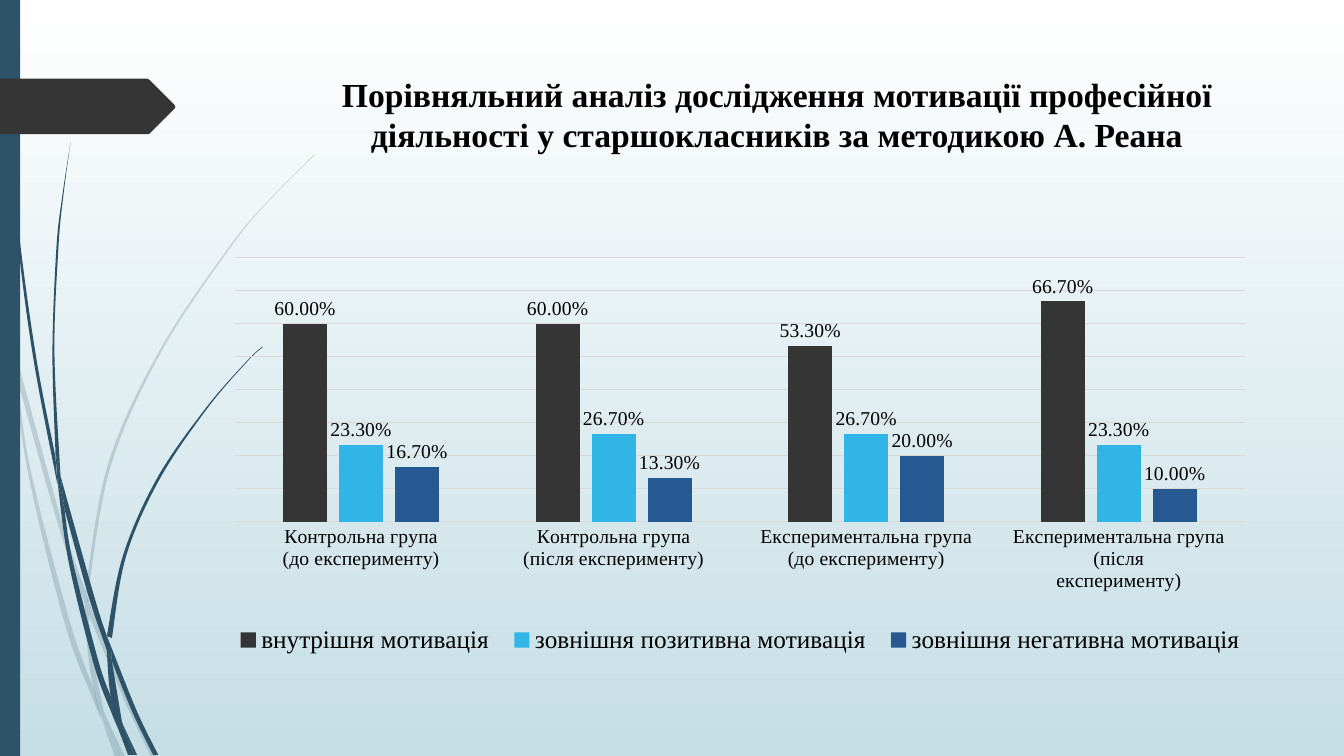
from lxml.etree import SubElement
from pptx import Presentation
from pptx.chart.data import CategoryChartData as ChartData
from pptx.dml.color import RGBColor as RGB
from pptx.enum.chart import XL_CHART_TYPE as CT, XL_LABEL_POSITION as LP
from pptx.enum.chart import XL_LEGEND_POSITION as LegPos, XL_TICK_MARK as Tick
from pptx.enum.shapes import MSO_SHAPE as Shape
from pptx.enum.text import MSO_ANCHOR as Anchor, PP_ALIGN as Align
from pptx.oxml import parse_xml
from pptx.oxml.ns import nsdecls, qn
from pptx.util import Inches, Pt

COLORS = {
    "sky": "FFFFFF", "mist": "C5DEE5", "teal": "2E5369", "dark": "353535",
    "text": "000000", "grid": "D9D9D9", "blue": "31B4E6", "navy": "265991",
}
COLS, ROWS, CELL = 1333, 750, Inches(0.01)

PALE_BLADES = [
    ([(11, 350), (9, 322), (0, 282)], [(0, 299), (10, 344)]),
    ([(17, 376), (58, 522), (84, 599)], [(85, 586), (62, 520), (14, 345)]),
    ([(88, 610), (123, 694), (150, 751)], [(155, 751), (127, 692), (92, 607), (88, 596)]),
    ([(119, 751), (124, 751)], [(105, 711)]),
    ([(11, 350), (28, 470), (65, 621), (92, 693), (101, 714)],
     [(93, 683), (70, 619), (31, 469), (17, 376)]),
    ([(84, 599), (87, 646), (93, 683), (105, 711)], [(103, 706), (91, 646), (88, 608)]),
    ([(88, 596), (88, 584), (110, 462), (160, 349), (229, 245), (268, 198), (312, 154)],
     [(312, 153), (268, 197), (228, 244), (158, 348), (107, 461), (85, 584)]),
    ([(101, 714), (114, 751)], [(119, 751)]),
    ([(88, 608), (88, 596)], [(85, 586), (84, 599)]),
    ([(93, 683), (99, 707), (119, 751)], [(105, 711), (96, 692)]),
]
DARK_BLADES = [
    ([(3, 0), (7, 110), (17, 233), (33, 355), (57, 481)],
     [(55, 453), (36, 355), (19, 232), (8, 109), (4, 0)]),
    ([(64, 505), (88, 592), (106, 645)], [(106, 631), (93, 590), (60, 472)]),
    ([(111, 656), (132, 708), (152, 749)], [(157, 749), (136, 706), (110, 641)]),
    ([(57, 477), (68, 557), (93, 659), (111, 708), (117, 722)],
     [(110, 691), (98, 657), (72, 556), (64, 505)]),
    ([(60, 472), (54, 349), (58, 245), (63, 193), (70, 141)],
     [(70, 141), (62, 193), (56, 245), (52, 349), (55, 449)]),
    ([(133, 749), (136, 749)], [(122, 719)]),
    ([(57, 477), (64, 505)], [(60, 472), (55, 449)]),
    ([(111, 633), (125, 552), (158, 476), (205, 406), (245, 359), (261, 344)],
     [(260, 344), (245, 358), (204, 405), (156, 474), (122, 551), (106, 631)]),
    ([(117, 722), (127, 749)], [(131, 749)]),
    ([(106, 645), (110, 691), (122, 719)], [(121, 716), (111, 656)]),
    ([(106, 645), (111, 656)], [(110, 641), (106, 631)]),
    ([(110, 691), (117, 722), (130, 749)], [(133, 749), (122, 719)]),
]
TAB = [(0, 78), (146, 78), (148, 79), (173, 104), (174, 106), (173, 108), (148, 133),
       (146, 133), (0, 133)]
TITLE = ("Порівняльний аналіз дослідження мотивації професійної діяльності "
         "у старшокласників за методикою А. Реана")
GROUPS = ["Контрольна група\n(до експерименту)", "Контрольна група\n(після експерименту)",
          "Експериментальна група\n(до експерименту)",
          "Експериментальна група\n(після\nексперименту)"]
MOTIVATION = [
    ("внутрішня мотивація", (0.6, 0.6, 0.533, 0.667), "dark"),
    ("зовнішня позитивна мотивація", (0.233, 0.267, 0.267, 0.233), "blue"),
    ("зовнішня негативна мотивація", (0.167, 0.133, 0.2, 0.1), "navy"),
]


def bezier(edge):
    ends = [edge[0], *edge, edge[-1]]
    points = []
    for a, b, c, d in zip(ends, ends[1:], ends[2:], ends[3:]):
        points.append(tuple(q + (r - p) / 6 for p, q, r in zip(a, b, c)))
        points.append(tuple(q - (r - p) / 6 for p, q, r in zip(b, c, d)))
        points.append(c)
    return points


class Deck:
    """Draws styled elements on one slide, measured in grid columns and rows."""

    def __init__(self, font="Times New Roman"):
        self.prs = Presentation()
        self.prs.slide_width, self.prs.slide_height = COLS * CELL, ROWS * CELL
        self.slide = self.prs.slides.add_slide(self.prs.slide_layouts[6])
        self.shapes, self.font = self.slide.shapes, font

    def color(self, name):
        return RGB.from_string(COLORS[name])

    def cells(self, *counts):
        return [round(n * CELL) for n in counts]

    def style(self, font, size, bold=False):
        font.name, font.size, font.bold = self.font, Pt(size), bold
        font.color.rgb = self.color("text")

    def paint(self, sp, color, alpha=None):
        sp.shadow.inherit = False
        sp.fill.solid()
        sp.fill.fore_color.rgb = self.color(color)
        sp.line.fill.background()
        if alpha:
            clr = sp.fill._xPr.find(qn("a:solidFill"))[0]
            SubElement(clr, qn("a:alpha"), val=str(alpha * 1000))

    def background(self, top, bottom):
        fill = self.slide.background.fill
        fill.gradient()
        fill.gradient_angle = 270
        for stop, color, pos in zip(fill.gradient_stops, (top, bottom), (0, 1)):
            stop.color.rgb, stop.position = self.color(color), pos

    def rect(self, box, color):
        self.paint(self.shapes.add_shape(Shape.RECTANGLE, *self.cells(*box)), color)

    def outline(self, points, color, alpha=None):
        start, *rest = [self.cells(*point) for point in points]
        fb = self.shapes.build_freeform(*start, scale=1.0)
        fb.add_line_segments(rest, close=True)
        sp = fb.convert_to_shape()
        self.paint(sp, color, alpha)
        return sp

    def blade(self, out, back, color, alpha=None):
        join = [out[-1], back[0], back[0]]
        sp = self.outline([out[0], *bezier(out), *join, *bezier(back)], color, alpha)
        lines = list(sp._element.iter(qn("a:lnTo")))
        whole = (len(out) + len(back) - 1) * 3
        for i in range(0, whole, 3):
            curve = lines[i].makeelement(qn("a:cubicBezTo"))
            lines[i].addprevious(curve)
            for line in lines[i:i + 3]:
                curve.append(line[0])
                line.getparent().remove(line)

    def title(self, box, text, size):
        tf = self.shapes.add_textbox(*self.cells(*box)).text_frame
        tf.word_wrap, tf.vertical_anchor = True, Anchor.TOP
        p = tf.paragraphs[0]
        p.text, p.alignment = text, Align.CENTER
        self.style(p.runs[0].font, size, bold=True)

    def chart(self, box, cats, series, plot_box, legend_box):
        data = ChartData(number_format="0.00%")
        data.categories = cats
        for name, values, _ in series:
            data.add_series(name, values)
        chart = self.shapes.add_chart(CT.COLUMN_CLUSTERED, *self.cells(*box), data).chart
        self.style(chart.font, 14)
        chart.has_title = False
        chart.has_legend = True
        chart.legend.position, chart.legend.include_in_layout = LegPos.BOTTOM, False
        self.style(chart.legend.font, 18)
        cat, val = chart.category_axis, chart.value_axis
        cat.major_tick_mark = Tick.NONE
        self.style(cat.tick_labels.font, 14)
        val.visible, val.has_major_gridlines = False, True
        val.minimum_scale, val.maximum_scale, val.major_unit = 0, 0.8, 0.1
        for line in (cat.format.line, val.major_gridlines.format.line):
            line.color.rgb, line.width = self.color("grid"), Pt(0.75)
        plot = chart.plots[0]
        plot.gap_width, plot.overlap, plot.vary_by_categories = 219, -27, False
        for ser, (_, _, color) in zip(plot.series, series):
            ser.format.fill.solid()
            ser.format.fill.fore_color.rgb = self.color(color)
            labels = ser.data_labels
            labels.show_value, labels.position = True, LP.OUTSIDE_END
            labels.number_format, labels.number_format_is_linked = "0.00%", False
            self.style(labels.font, 14)
        area = chart._chartSpace.chart.plotArea
        self.place(area, 0, box, plot_box, '<c:layoutTarget val="inner"/>')
        self.place(chart.legend._element, 1, box, legend_box)

    def place(self, part, index, box, inner, target=""):
        for old in part.findall(qn("c:layout")):
            part.remove(old)
        left, top, width, height = box
        x, y, w, h = inner
        shares = ((x - left) / width, (y - top) / height, w / width, h / height)
        modes = "".join(f'<c:{k}Mode val="edge"/>' for k in "xy")
        sizes = "".join(f'<c:{k} val="{v:.4f}"/>' for k, v in zip("xywh", shares))
        part.insert(index, parse_xml(
            f'<c:layout {nsdecls("c")}><c:manualLayout>{target}{modes}{sizes}'
            "</c:manualLayout></c:layout>"))


def main():
    deck = Deck()
    deck.background("sky", "mist")
    for blades, alpha in ((PALE_BLADES, 20), (DARK_BLADES, None)):
        for out, back in blades:
            deck.blade(out, back, "teal", alpha)
    deck.rect((0, 0, 20, ROWS), "teal")
    deck.outline(TAB, "dark")
    deck.title((283, 68, 975, 140), TITLE, 24)
    deck.chart((208, 233, 1051, 448), GROUPS, MOTIVATION,
               (233, 255.5, 1002, 262.5), (222, 616, 1024, 38))
    deck.prs.save("out.pptx")


if __name__ == "__main__":
    main()
